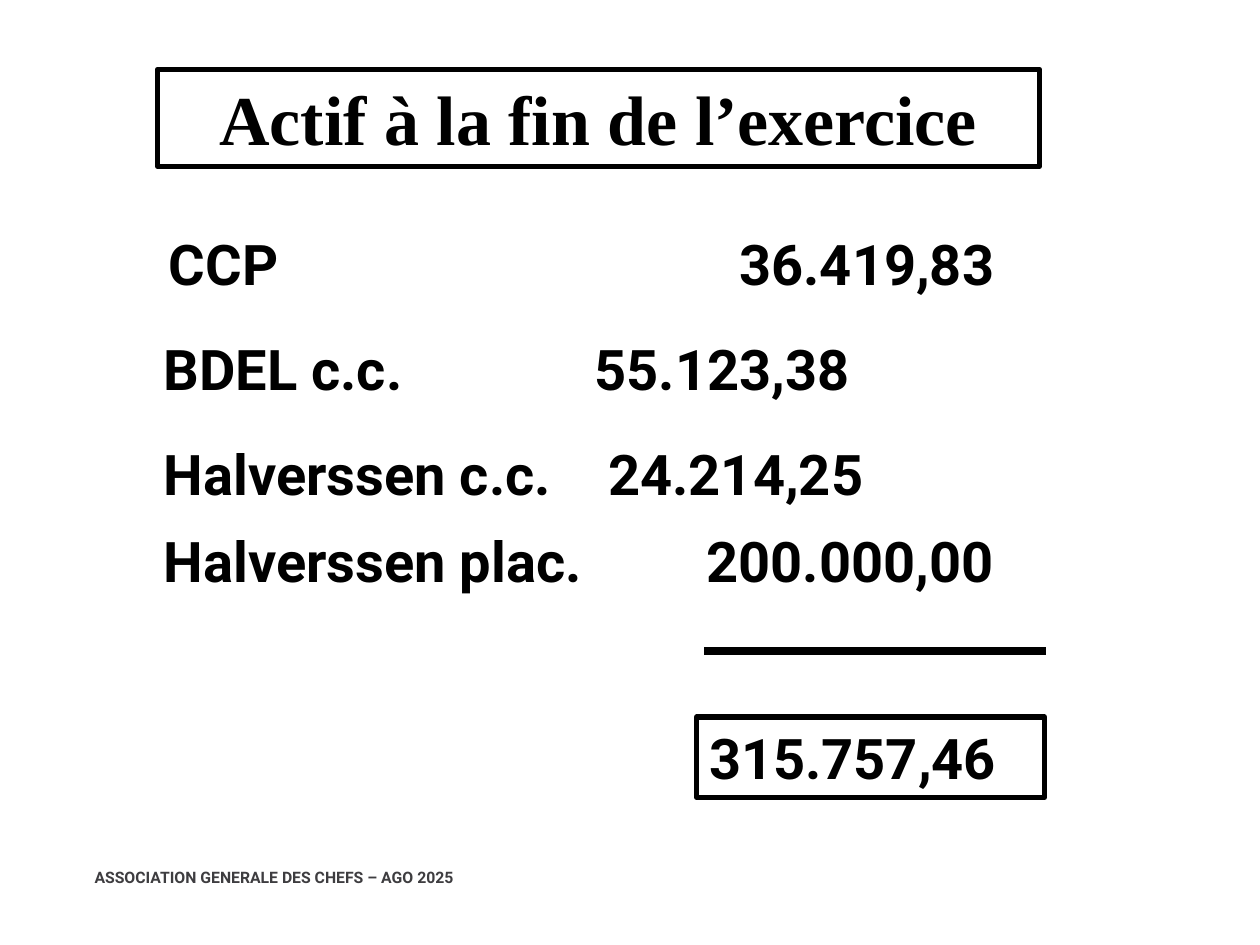
from lxml import etree
from pptx import Presentation
from pptx.dml.color import RGBColor
from pptx.enum import shapes, text
from pptx.oxml.ns import qn
from pptx.util import Inches, Pt

BLACK = RGBColor(0x00, 0x00, 0x00)
GREY = RGBColor(0x3E, 0x3D, 0x40)
INSET = 0.1

TITLE = "Actif à la fin de l’exercice"
# Account, amount, box left, box top, left edge of the amount
ACCOUNTS = [
    ("CCP", "36.419,83", 1.24, 1.77, 5.87),
    ("BDEL c.c.", "55.123,38", 1.2, 2.61, 4.72),
    ("Halverssen c.c.", "24.214,25", 1.2, 3.44, 4.83),
    ("Halverssen plac.", "200.000,00", 1.2, 4.13, 5.61),
]
TOTAL = "315.757,46"
FOOTER = "ASSOCIATION GENERALE DES CHEFS – AGO 2025"


def add_text(s, content, left, top, width, height, size=32, font="Roboto",
             color=BLACK, align=text.PP_ALIGN.LEFT, framed=False,
             inset=INSET, tab=None):
    box = [Inches(v) for v in (left, top, width, height)]
    if framed:
        sp = s.shapes.add_shape(shapes.MSO_SHAPE.RECTANGLE, *box)
        sp.shadow.inherit = False
        sp.fill.background()
        sp.line.color.rgb = BLACK
        sp.line.width = Pt(3)
    else:
        sp = s.shapes.add_textbox(*box)
    tf = sp.text_frame
    tf.word_wrap = True
    tf.margin_left = tf.margin_right = Inches(inset)
    tf.margin_top = tf.margin_bottom = Inches(inset / 2)
    p = tf.paragraphs[0]
    p.alignment = align
    r = p.add_run()
    r.text = content
    r.font.name = font
    r.font.size = Pt(size)
    r.font.bold = True
    r.font.color.rgb = color
    if tab is not None:
        tabs = etree.SubElement(p._p.get_or_add_pPr(), qn("a:tabLst"))
        etree.SubElement(tabs, qn("a:tab"), pos=str(Inches(tab)), algn="l")
    return sp


prs = Presentation()
prs.slide_width, prs.slide_height = Inches(10), Inches(7.5)
s = prs.slides.add_slide(prs.slide_layouts[6])

# Title
add_text(s, TITLE, 1.25, 0.55, 7, 0.77, size=40, font="Times New Roman",
         align=text.PP_ALIGN.CENTER, framed=True)

# Accounts, each amount set at its own tab stop
for account, amount, left, top, amount_left in ACCOUNTS:
    add_text(s, f"{account}\t{amount}", left, top, 7.19, 0.64,
             tab=amount_left - left - INSET)

# Sum line and total
line = s.shapes.add_connector(shapes.MSO_CONNECTOR.STRAIGHT, Inches(5.59),
                              Inches(5.17), Inches(8.3), Inches(5.17))
line.line.color.rgb = BLACK
line.line.width = Pt(4.5)
etree.SubElement(line._element.spPr, qn("a:effectLst"))
add_text(s, TOTAL, 5.53, 5.69, 2.76, 0.64, framed=True)

# Footer
add_text(s, FOOTER, 0.75, 6.89, 5.91, 0.39, size=9, color=GREY, inset=0)

prs.save("out.pptx")
